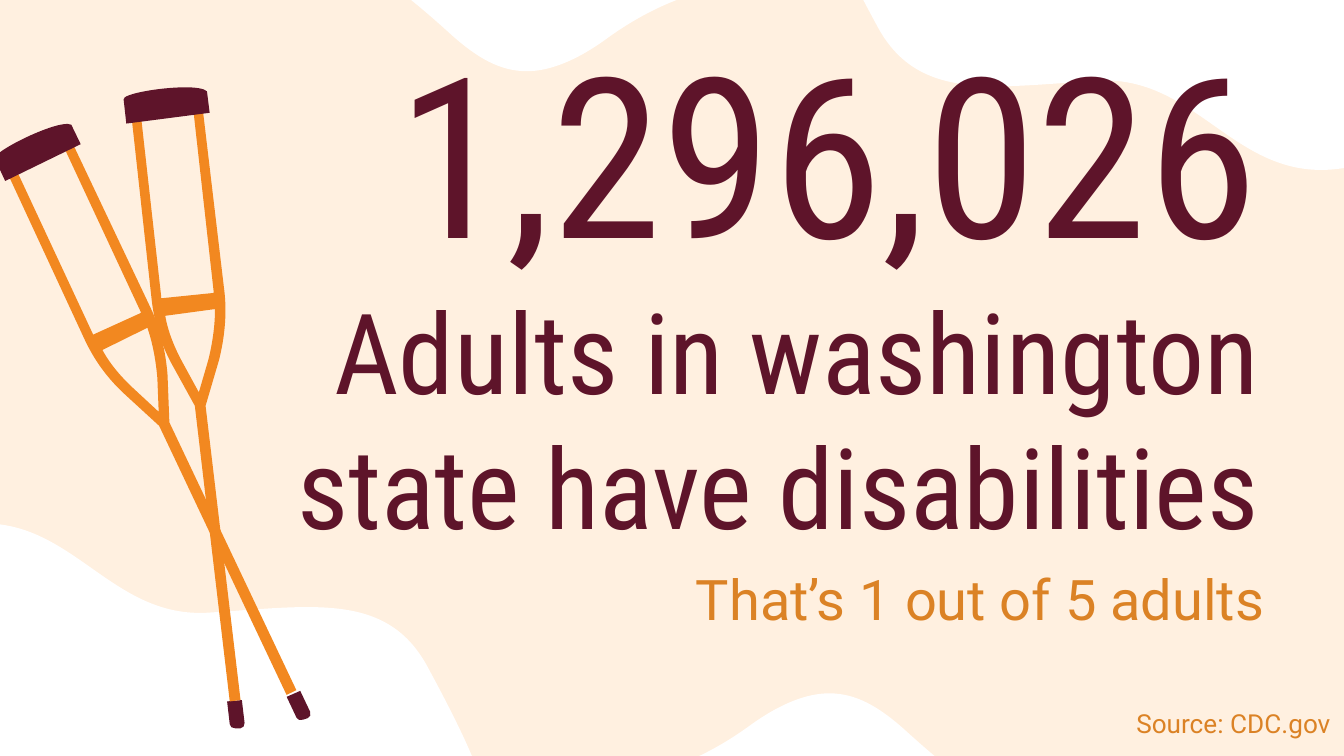
"""Build a slide on adults with disabilities, with waves and a pair of crutches."""
from dataclasses import dataclass
from math import cos, radians, sin

from lxml.etree import SubElement
from pptx import Presentation
from pptx.dml.color import RGBColor
from pptx.enum.text import MSO_ANCHOR, MSO_AUTO_SIZE, PP_ALIGN
from pptx.oxml.ns import qn
from pptx.util import Cm, Pt


@dataclass(frozen=True)
class Theme:
    cream: str = "FFF0E0"
    white: str = "FFFFFF"
    wine: str = "5E142A"
    orange: str = "F28820"
    amber: str = "DB8225"
    title_font: str = "Roboto Condensed"
    body_font: str = "Roboto"
    number_size: int = 120
    title_size: int = 60
    body_size: int = 30
    source_size: int = 14


@dataclass(frozen=True)
class Part:
    """Lists each outline as a start point, then lines (2 numbers) and curves (6)."""
    fill: str
    area: tuple
    outlines: list
    tilt: float = 0


THEME = Theme()
INCH = Cm(2.54)

TITLE = [("1,296,026", THEME.number_size),
         ("Adults in washington state have disabilities", THEME.title_size)]
BODY = [("That’s 1 out of 5 adults", THEME.body_size)]
SOURCE = [("Source: CDC.gov", THEME.source_size)]

TITLE_AREA = (1.91, 0.46, 7.56, 3.29)
BODY_AREA = (4.96, 4.03, 4.55, 0.86)
SOURCE_AREA = (8.13, 5.13, 1.87, 0.44)

CORNER_WAVE = Part(THEME.white, (6.46, -1.36, 4.39, 2.96), [[
    (7.38, -1.04), (6.16, -0.57), (6.16, -0.57, 6.21, -0.39, 6.52, 0.18),
    (6.82, 0.76, 7.38, 0.65, 8.17, 0.6), (8.96, 0.56, 9.22, 1.45, 10.1, 1.23),
    (10.12, 1.23, 10.15, 1.22, 10.18, 1.21), (10.97, 0.97, 10.99, 0.26, 10.99, 0.26),
    (10.49, -1.22), (10.29, -1.55), (10.29, -1.55, 9.73, -1.52, 9.69, -1.51),
    (9.69, -1.51, 9.69, -1.51, 9.69, -1.51), (9.69, -1.51, 9.69, -1.5, 9.69, -1.5),
    (9.64, -1.49, 7.38, -1.04, 7.38, -1.04)]], tilt=-16.6)
EDGE_WAVE = Part(THEME.white, (4.72, 5.16, 2.5, 0.67), [[
    (6.17, 5.16), (6.37, 5.16, 6.54, 5.26, 6.73, 5.43),
    (7.07, 5.74, 7.22, 5.83, 7.22, 5.83), (4.72, 5.78),
    (4.72, 5.78, 5.1, 5.75, 5.58, 5.4), (5.8, 5.24, 6, 5.16, 6.17, 5.16)]])
WAVES = [(CORNER_WAVE, (-1.14, 3.56)), (EDGE_WAVE, (2.87, -0.14))]

TIP = Part(THEME.wine, (1.69, 5.21, 0.13, 0.21), [[
    (1.8, 5.21), (1.82, 5.38), (1.82, 5.4, 1.81, 5.42, 1.79, 5.42), (1.75, 5.42),
    (1.75, 5.42, 1.75, 5.42, 1.75, 5.42), (1.73, 5.42, 1.71, 5.41, 1.71, 5.39),
    (1.69, 5.22), (1.8, 5.21)]])
FRAME = Part(THEME.orange, (0.98, 0.82, 0.81, 4.41), [
    [(1.6, 2.3), (1.23, 2.35), (1.25, 2.47, 1.3, 2.59, 1.36, 2.7), (1.48, 2.92),
     (1.55, 2.68), (1.58, 2.56, 1.6, 2.43, 1.6, 2.3)],
    [(1.51, 0.82), (1.67, 2.17), (1.69, 2.34, 1.67, 2.52, 1.63, 2.68), (1.53, 3.02),
     (1.79, 5.21), (1.71, 5.22), (1.45, 3.02), (1.29, 2.73),
     (1.2, 2.57, 1.15, 2.41, 1.13, 2.24), (0.98, 0.88), (1.05, 0.87), (1.2, 2.21),
     (1.2, 2.22, 1.2, 2.22, 1.2, 2.22), (1.59, 2.18),
     (1.59, 2.17, 1.59, 2.17, 1.59, 2.17), (1.44, 0.83), (1.51, 0.82)]])
PAD = Part(THEME.wine, (0.91, 0.65, 0.65, 0.27), [[
    (1.38, 0.65), (1.46, 0.65, 1.52, 0.66, 1.54, 0.68), (1.56, 0.84), (0.94, 0.92),
    (0.92, 0.74), (0.91, 0.7, 1.19, 0.65, 1.38, 0.65)]])
LEAN = -18.6
CRUTCH = [(TIP, (2.16, 5.15)), (FRAME, (0.72, 0.99)), (PAD, (-0.05, 0.99))]


def color(code):
    return RGBColor.from_string(code)


def straighten(part, segment):
    left, top, width, height = part.area
    cosine, sine = cos(radians(part.tilt)), sin(radians(part.tilt))
    points = []
    for x, y in zip(segment[::2], segment[1::2]):
        across, down = x - left - width / 2, y - top - height / 2
        points.append((round(INCH * (across * cosine + down * sine + width / 2)),
                       round(INCH * (down * cosine - across * sine + height / 2))))
    return points


def draw(page, part, corner, turn=0):
    outlines = [[straighten(part, segment) for segment in outline]
                for outline in part.outlines]
    builder = page.shapes.build_freeform(*outlines[0][0][0])
    builder.add_line_segments([segment[-1] for segment in outlines[0][1:]])
    shape = builder.convert_to_shape()
    size = part.area[2:]
    shape.left, shape.top, shape.width, shape.height = (
        round(INCH * value) for value in (*corner, *size))
    shape.rotation = (part.tilt + turn) % 360

    path_element = next(shape.element.iter(qn("a:path")))
    path_element.clear()
    for key, value in zip("wh", size):
        path_element.set(key, str(round(INCH * value)))
    for outline in outlines:
        for index, points in enumerate(outline):
            tag = "a:moveTo" if index == 0 else "a:lnTo"
            command = SubElement(path_element, qn("a:cubicBezTo" if len(points) > 1 else tag))
            for x, y in points:
                SubElement(command, qn("a:pt"), x=str(x), y=str(y))
        SubElement(path_element, qn("a:close"))

    shape.fill.solid()
    shape.fill.fore_color.rgb = color(part.fill)
    shape.line.fill.background()
    shape.shadow.inherit = False
    return shape


def write(box, area, lines, font, fill, anchor=MSO_ANCHOR.TOP, spacing=1.0, after=0):
    box.left, box.top, box.width, box.height = (round(INCH * value) for value in area)
    frame = box.text_frame
    frame.word_wrap = True
    frame.auto_size = MSO_AUTO_SIZE.NONE
    frame.vertical_anchor = anchor
    frame.margin_left = frame.margin_right = INCH // 10
    frame.margin_top = frame.margin_bottom = INCH // 10
    for index, (text, size) in enumerate(lines):
        para = frame.add_paragraph() if index else frame.paragraphs[0]
        para.text = text
        para.alignment = PP_ALIGN.RIGHT
        para.line_spacing = spacing
        para.space_before, para.space_after = Pt(0), Pt(after)
        para.font.name, para.font.size = font, Pt(size)
        para.font.color.rgb = color(fill)
        properties = para._p.get_or_add_pPr()
        properties.set("marL", "0")
        properties.set("indent", "0")
        properties.insert_element_before(
            SubElement(properties, qn("a:buNone")), "a:tabLst", "a:defRPr", "a:extLst")


def main():
    deck = Presentation()
    deck.slide_width, deck.slide_height = Cm(25.4), Cm(14.29)
    page = deck.slides.add_slide(deck.slide_layouts[1])
    page.background.fill.solid()
    page.background.fill.fore_color.rgb = color(THEME.cream)

    for wave, opposite in WAVES:
        draw(page, wave, wave.area[:2])
        draw(page, wave, opposite, 180)

    title, body = page.shapes.title, page.placeholders[1]
    for box in (body, title):
        box.element.getparent().append(box.element)
    write(body, BODY_AREA, BODY, THEME.body_font, THEME.amber, spacing=1.15, after=16)
    write(title, TITLE_AREA, TITLE, THEME.title_font, THEME.wine, MSO_ANCHOR.MIDDLE)

    leaning = [draw(page, part, corner, LEAN) for part, corner in CRUTCH]
    page.shapes.add_group_shape(leaning)
    upright = [draw(page, part, part.area[:2]) for part, _ in CRUTCH]
    page.shapes.add_group_shape(upright)

    source = page.shapes.add_textbox(0, 0, 0, 0)
    write(source, SOURCE_AREA, SOURCE, THEME.body_font, THEME.amber, spacing=1.15, after=16)
    deck.save("out.pptx")


if __name__ == "__main__":
    main()
